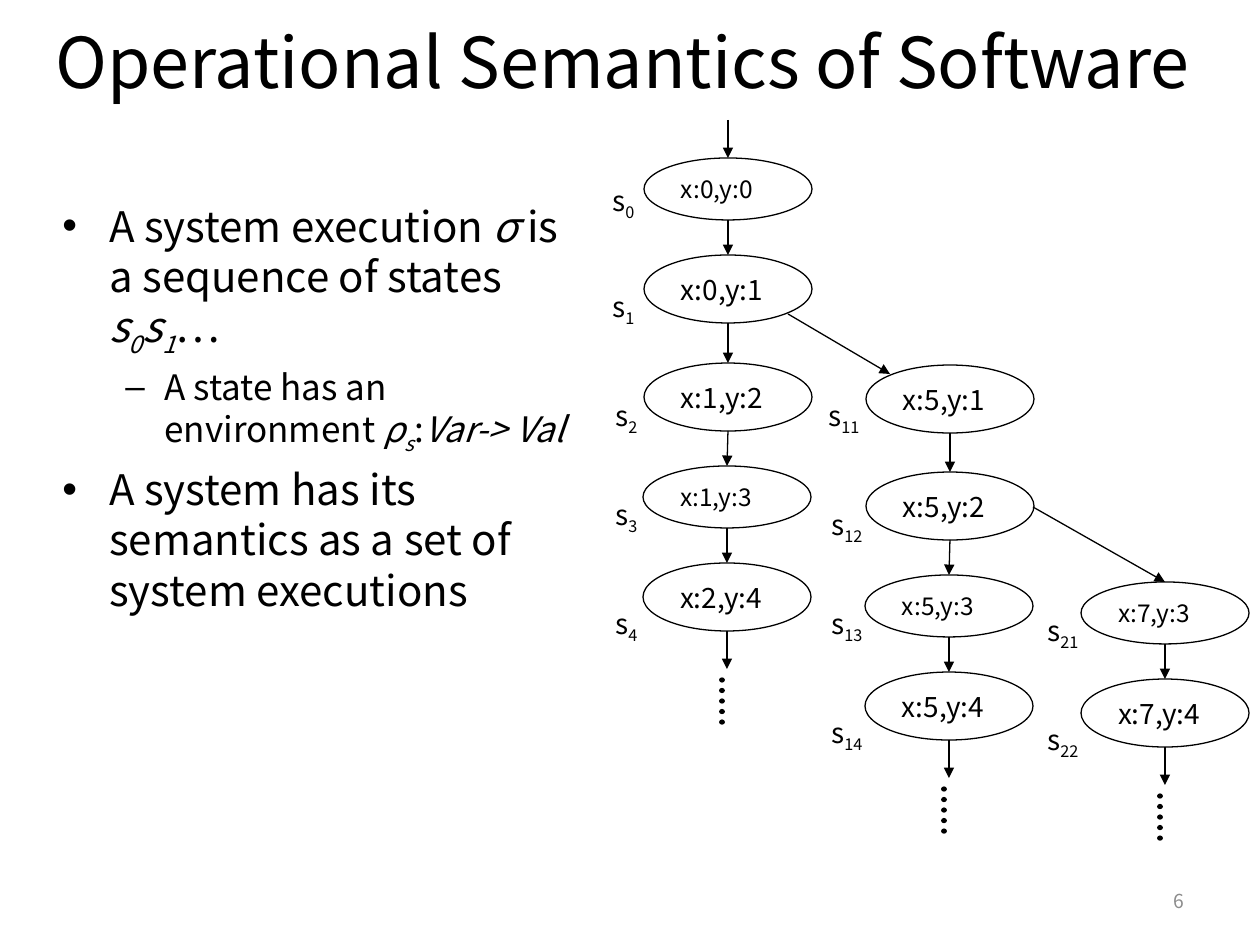
import pptx
import pptx.util
import pptx.dml.color
import pptx.enum.dml
import pptx.enum.shapes
import pptx.enum.text
import pptx.oxml
import pptx.oxml.ns
from lxml import etree

FONT = "Noto Sans CJK KR"
BULLET_FONT = "Arial"
BLACK = pptx.dml.color.RGBColor(0, 0, 0)
GRAY = pptx.dml.color.RGBColor(0x8C, 0x8C, 0x8C)
ALIGN = pptx.enum.text.PP_ALIGN
ANCHOR = pptx.enum.text.MSO_ANCHOR
PLAIN, ITALIC, SUB, ITALIC_SUB = (False, False), (True, False), (False, True), (True, True)

TITLE = "Operational Semantics of Software"
PAGE_NUMBER = "6"
BULLETS = [
    (0, [("A system execution ", PLAIN), ("σ ", ITALIC), ("is a sequence of states ", PLAIN),
         ("s", ITALIC), ("0", ITALIC_SUB), ("s", ITALIC), ("1", ITALIC_SUB), ("…", PLAIN)]),
    (1, [("A state has an environment ", PLAIN), ("ρ", ITALIC), ("s", ITALIC_SUB),
         (":", PLAIN), ("Var-> Val", ITALIC)]),
    (0, [("A system has its semantics as a set of system executions", PLAIN)]),
]
LEVELS = [
    {"mark": "•", "margin": 47, "hang": 47, "size": 24, "before": 4.8},
    {"mark": "–", "margin": 102, "hang": 39, "size": 20, "before": 4},
]

# state index, values, left, top, text size, label left, label top
CHAINS = [
    [("0", "x:0,y:0", 644, 158, 14, 600, 177),
     ("1", "x:0,y:1", 644, 255, 16, 600, 283),
     ("2", "x:1,y:2", 644, 363, 16, 603, 392),
     ("3", "x:1,y:3", 643, 466, 14, 603, 491),
     ("4", "x:2,y:4", 643, 563, 16, 603, 600)],
    [("11", "x:5,y:1", 866, 365, 16, 816, 392),
     ("12", "x:5,y:2", 866, 472, 16, 819, 501),
     ("13", "x:5,y:3", 865, 575, 14, 819, 600),
     ("14", "x:5,y:4", 865, 672, 16, 819, 709)],
    [("21", "x:7,y:3", 1081, 582, 14, 1035, 607),
     ("22", "x:7,y:4", 1081, 679, 16, 1035, 716)],
]
ENTRY = (728, 120, 728, 158)
BRANCHES = [(788, 314, 890, 374), (1033, 507, 1165, 582)]
STATE_WIDTH = 168
STATE_HEIGHT = {14: 62, 16: 68}
TAIL, DOTS_GAP, DOTS_LENGTH, DOTS_SHIFT = 38, 11, 50, 5


def px(value):
    return pptx.util.Emu(round(value * 914400 / 126))


def style(span, size, color=BLACK, look=PLAIN):
    italic, subscript = look
    span.font.name = FONT
    span.font.size = pptx.util.Pt(size)
    span.font.color.rgb = color
    span.font.italic = italic
    if subscript:
        span._r.get_or_add_rPr().set("baseline", "-25000")


def add_spans(para, parts, size):
    for text, look in parts:
        span = para.add_run()
        span.text = text
        style(span, size, look=look)


def add_box(page, left, top, width, height, wrap=True):
    box = page.shapes.add_textbox(px(left), px(top), px(width), px(height))
    box.text_frame.word_wrap = wrap
    return box.text_frame


def add_line_of_text(page, place, text, size, align, color=BLACK):
    frame = add_box(page, *place)
    frame.vertical_anchor = ANCHOR.MIDDLE
    frame.text = text
    para = frame.paragraphs[0]
    para.alignment = align
    style(para.runs[0], size, color)


def add_bullets(page):
    frame = add_box(page, 50, 194, 544, 655)
    for number, (level, parts) in enumerate(BULLETS):
        rule = LEVELS[level]
        para = frame.add_paragraph() if number else frame.paragraphs[0]
        para.level = level
        para.space_before = pptx.util.Pt(rule["before"] if number else 0)
        props = para._p.get_or_add_pPr()
        props.set("marL", str(px(rule["margin"])))
        props.set("indent", str(-px(rule["hang"])))
        etree.SubElement(props, pptx.oxml.ns.qn("a:buFont")).set("typeface", BULLET_FONT)
        etree.SubElement(props, pptx.oxml.ns.qn("a:buChar")).set("char", rule["mark"])
        add_spans(para, parts, rule["size"])


def add_line(page, x1, y1, x2, y2, dotted=False):
    line = page.shapes.add_connector(
        pptx.enum.shapes.MSO_CONNECTOR.STRAIGHT, px(x1), px(y1), px(x2), px(y2))
    line.line.color.rgb = BLACK
    line.line.width = pptx.util.Pt(3 if dotted else 0.75)
    outline = line.line._get_or_add_ln()
    if dotted:
        line.line.dash_style = pptx.enum.dml.MSO_LINE.ROUND_DOT
        outline.set("cap", "rnd")
    else:
        etree.SubElement(outline, pptx.oxml.ns.qn("a:tailEnd")).set("type", "triangle")
    etree.SubElement(line._element.spPr, pptx.oxml.ns.qn("a:effectLst"))


def add_state(page, index, values, left, top, size, label_left, label_top):
    state = page.shapes.add_shape(
        pptx.enum.shapes.MSO_SHAPE.OVAL,
        px(left), px(top), px(STATE_WIDTH), px(STATE_HEIGHT[size]))
    state.shadow.inherit = False
    state.fill.background()
    state.line.color.rgb = BLACK
    state.line.width = pptx.util.Pt(0.75)
    frame = state.text_frame
    frame.vertical_anchor = ANCHOR.MIDDLE
    frame.text = values
    frame.paragraphs[0].alignment = ALIGN.LEFT
    style(frame.paragraphs[0].runs[0], size)
    label = add_box(page, label_left, label_top, 52 if len(index) == 1 else 62, 46, wrap=False)
    label.auto_size = pptx.enum.text.MSO_AUTO_SIZE.SHAPE_TO_FIT_TEXT
    add_spans(label.paragraphs[0], [("s", PLAIN), (index, SUB)], 16)


def add_chain(page, chain):
    ends = []
    for state in chain:
        add_state(page, *state)
        left, top, size = state[2:5]
        ends.append((left + STATE_WIDTH / 2, top, top + STATE_HEIGHT[size]))
    for (x1, _, bottom), (x2, top, _) in zip(ends, ends[1:]):
        add_line(page, x1, bottom, x2, top)
    x, _, bottom = ends[-1]
    add_line(page, x, bottom, x, bottom + TAIL)
    start = bottom + TAIL + DOTS_GAP
    add_line(page, x - DOTS_SHIFT, start, x - DOTS_SHIFT, start + DOTS_LENGTH, dotted=True)


def main():
    deck = pptx.Presentation()
    deck.slide_width, deck.slide_height = px(1260), px(945)
    page = deck.slides.add_slide(deck.slide_layouts[6])
    add_line_of_text(page, (0, 23, 1245, 76), TITLE, 40, ALIGN.CENTER)
    add_bullets(page)
    add_line_of_text(page, (1092, 876, 105, 50), PAGE_NUMBER, 11, ALIGN.RIGHT, GRAY)
    for chain in CHAINS:
        add_chain(page, chain)
    for arrow in [ENTRY, *BRANCHES]:
        add_line(page, *arrow)
    deck.save("out.pptx")


if __name__ == "__main__":
    main()
